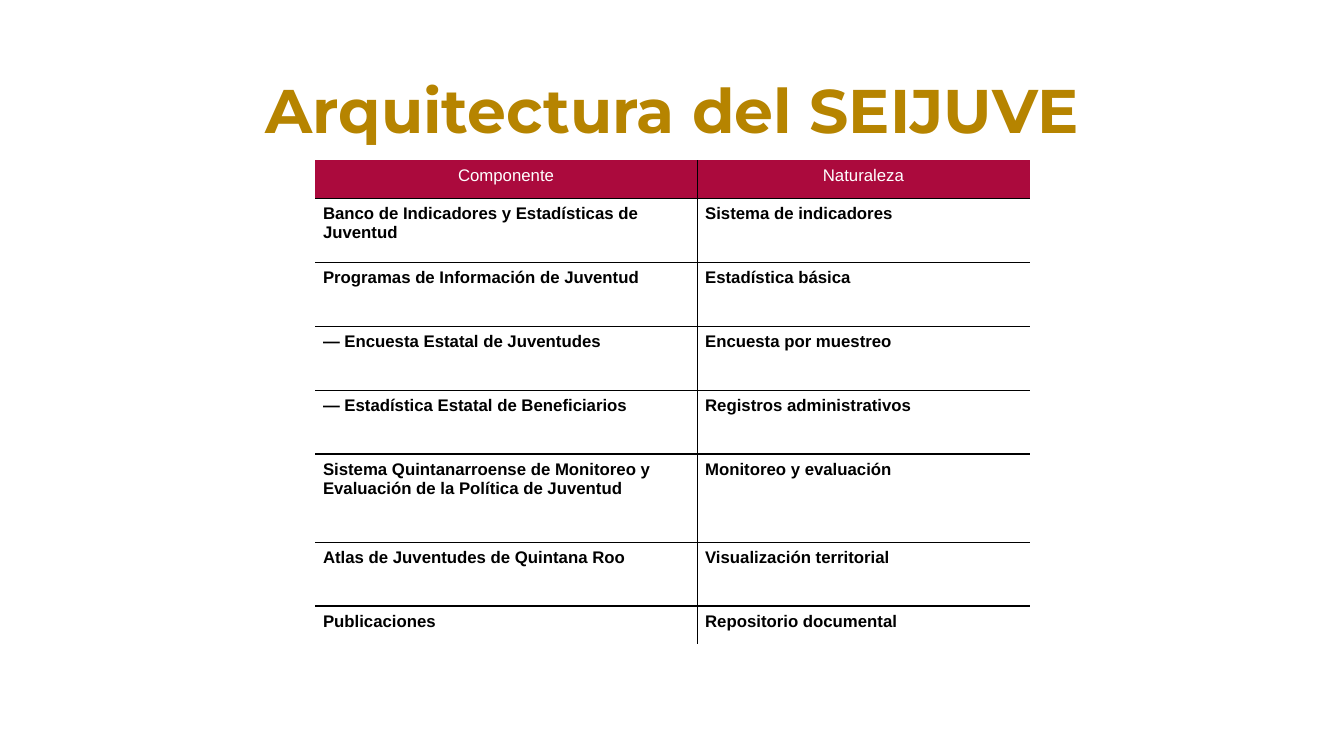
from dataclasses import dataclass

from lxml.etree import SubElement
from pptx import Presentation
from pptx.dml.color import RGBColor
from pptx.enum.text import MSO_ANCHOR, PP_ALIGN
from pptx.oxml.ns import qn
from pptx.util import Cm, Pt


@dataclass(frozen=True)
class Theme:
    gold: str = "B68400"
    crimson: str = "AB0A3D"
    white: str = "FFFFFF"
    black: str = "000000"
    title_font: str = "Montserrat"
    table_font: str = "Arial"
    title_size: int = 44
    table_size: int = 12
    border_width: int = 1


COLUMN_WIDTHS = (9.63, 8.38)
LINE_ROW, NORMAL_ROW, TALL_ROW = 0.96, 1.61, 2.22

# Row height in cm, component, nature
COMPONENT_ROWS = [
    (LINE_ROW, "Componente", "Naturaleza"),
    (NORMAL_ROW, "Banco de Indicadores y Estadísticas de Juventud", "Sistema de indicadores"),
    (NORMAL_ROW, "Programas de Información de Juventud", "Estadística básica"),
    (NORMAL_ROW, "— Encuesta Estatal de Juventudes", "Encuesta por muestreo"),
    (NORMAL_ROW, "— Estadística Estatal de Beneficiarios", "Registros administrativos"),
    (TALL_ROW, "Sistema Quintanarroense de Monitoreo y Evaluación de la Política de Juventud",
     "Monitoreo y evaluación"),
    (NORMAL_ROW, "Atlas de Juventudes de Quintana Roo", "Visualización territorial"),
    (LINE_ROW, "Publicaciones", "Repositorio documental"),
]


class PageBuilder:
    def __init__(self, page, theme):
        self.page = page
        self.theme = theme

    def style(self, paragraph, name, size, color, bold, align):
        paragraph.alignment = align
        font = paragraph.font
        font.name, font.size, font.bold = name, Pt(size), bold
        font.color.rgb = RGBColor.from_string(color)

    def title(self, text, left, top, width, height):
        box = self.page.shapes.add_textbox(Cm(left), Cm(top), Cm(width), Cm(height))
        frame = box.text_frame
        frame.word_wrap = True
        frame.vertical_anchor = MSO_ANCHOR.MIDDLE
        paragraph = frame.paragraphs[0]
        paragraph.text = text
        paragraph.line_spacing = 0.9
        self.style(paragraph, self.theme.title_font, self.theme.title_size,
                   self.theme.gold, True, PP_ALIGN.CENTER)

    def borders(self, cell, visible):
        """Draw the visible sides (L, R, T, B) and clear the others."""
        properties = cell._tc.get_or_add_tcPr()
        for index, side in enumerate("LRTB"):
            line = SubElement(properties, qn(f"a:ln{side}"), w=str(Pt(self.theme.border_width)))
            if side in visible:
                fill = SubElement(line, qn("a:solidFill"))
                SubElement(fill, qn("a:srgbClr"), val=self.theme.black)
            else:
                SubElement(line, qn("a:noFill"))
            properties.insert(index, line)

    def cell(self, cell, text, is_header):
        theme = self.theme
        cell.margin_left = cell.margin_right = Cm(0.2)
        cell.margin_top = cell.margin_bottom = Cm(0.15)
        cell.fill.solid()
        cell.fill.fore_color.rgb = RGBColor.from_string(
            theme.crimson if is_header else theme.white)
        paragraph = cell.text_frame.paragraphs[0]
        paragraph.text = text
        self.style(paragraph, theme.table_font, theme.table_size,
                   theme.white if is_header else theme.black, not is_header,
                   PP_ALIGN.CENTER if is_header else PP_ALIGN.LEFT)

    def table(self, rows, widths, left, top):
        height = sum(row[0] for row in rows)
        table = self.page.shapes.add_table(
            len(rows), len(widths), Cm(left), Cm(top), Cm(sum(widths)), Cm(height)).table
        table.horz_banding = False
        for column, width in zip(table.columns, widths):
            column.width = Cm(width)
        for row_index, (row_height, *texts) in enumerate(rows):
            table.rows[row_index].height = Cm(row_height)
            for column_index, text in enumerate(texts):
                cell = table.cell(row_index, column_index)
                self.cell(cell, text, row_index == 0)
                # Only the inner grid lines show
                visible = "R" if column_index == 0 else "L"
                visible += "T" if row_index > 0 else ""
                visible += "B" if row_index < len(rows) - 1 else ""
                self.borders(cell, visible)


def main():
    deck = Presentation()
    deck.slide_width, deck.slide_height = Cm(33.87), Cm(19.05)
    page = deck.slides.add_slide(deck.slide_layouts[6])
    builder = PageBuilder(page, Theme())

    # Heading
    builder.title("Arquitectura del SEIJUVE", 2.34, 1.02, 29.21, 3.68)

    # Components of the system
    builder.table(COMPONENT_ROWS, COLUMN_WIDTHS, 7.94, 4.04)

    deck.save("out.pptx")


if __name__ == "__main__":
    main()
